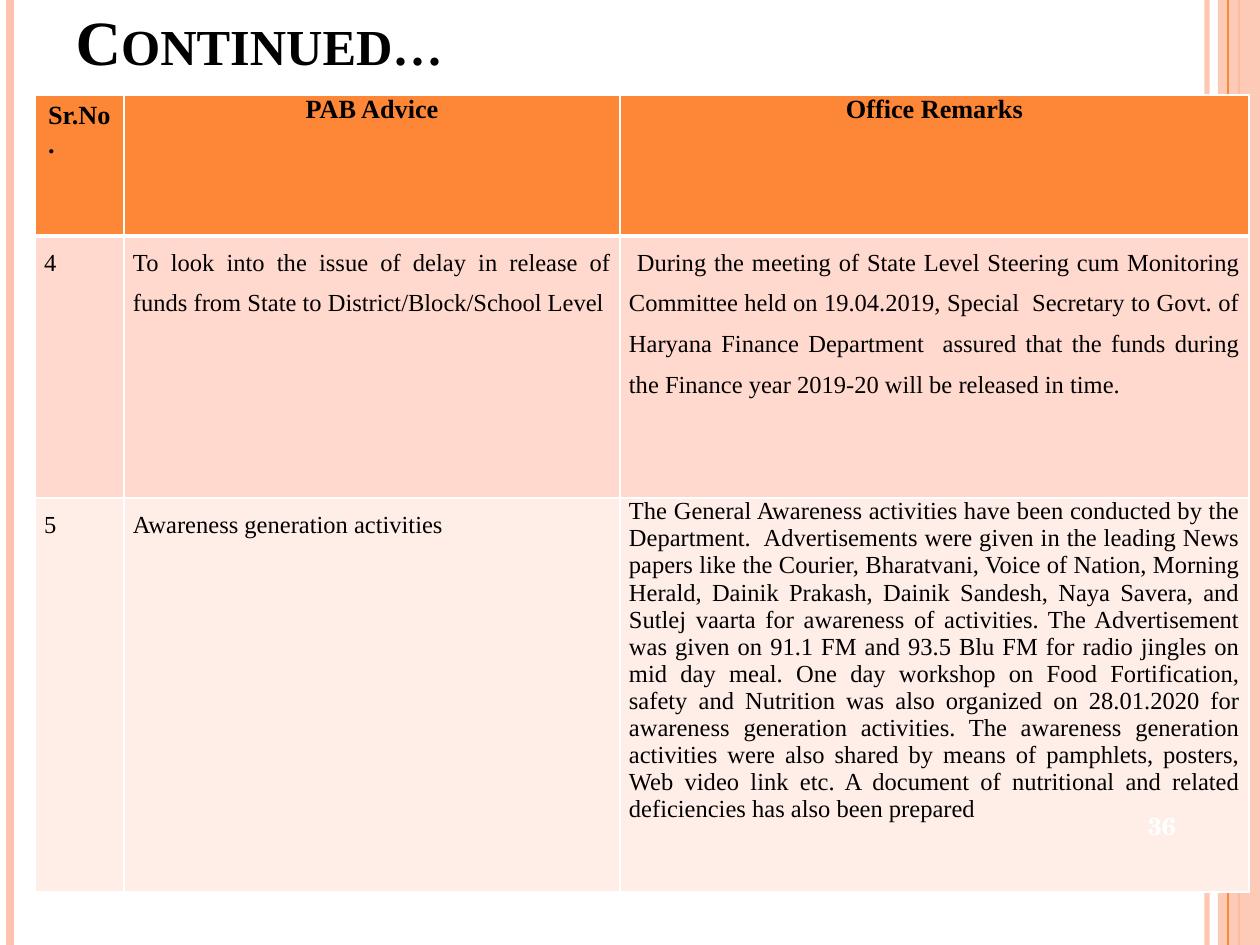
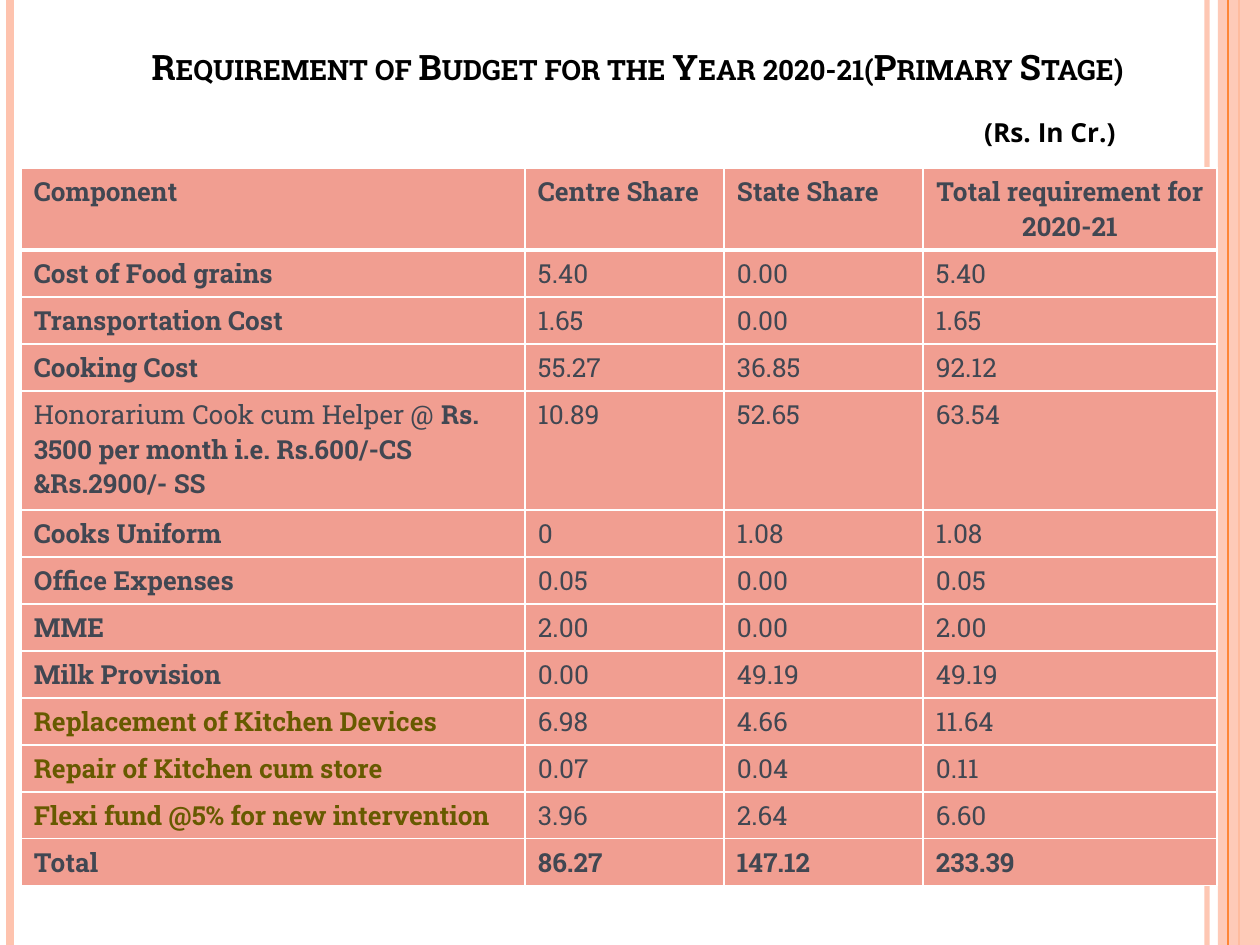
from lxml import etree
from pptx import Presentation
from pptx.dml.color import RGBColor
from pptx.enum.shapes import MSO_CONNECTOR, MSO_SHAPE
from pptx.enum.text import MSO_ANCHOR, MSO_AUTO_SIZE, PP_ALIGN
from pptx.oxml.ns import qn
from pptx.util import Pt

STRAIGHT = MSO_CONNECTOR.STRAIGHT
RECT = MSO_SHAPE.RECTANGLE
LEFT, CENTER, RIGHT, JUSTIFY = PP_ALIGN.LEFT, PP_ALIGN.CENTER, PP_ALIGN.RIGHT, PP_ALIGN.JUSTIFY
MIDDLE, BOTTOM = MSO_ANCHOR.MIDDLE, MSO_ANCHOR.BOTTOM
NO_FIT = MSO_AUTO_SIZE.NONE

WHITE = RGBColor(0xFF, 0xFF, 0xFF)
BLACK = RGBColor(0x00, 0x00, 0x00)
ORANGE = RGBColor(0xFE, 0x86, 0x37)
PEACH = RGBColor(0xFE, 0xC3, 0xAE)
BAND_DARK = RGBColor(0xFF, 0xD9, 0xCE)
BAND_LIGHT = RGBColor(0xFF, 0xED, 0xE8)
SALMON = RGBColor(0xF1, 0x9E, 0x91)
SLATE = RGBColor(0x41, 0x47, 0x52)
OLIVE = RGBColor(0x67, 0x5A, 0x00)

SERIF, SLAB = "Times New Roman", "Roboto Slab"
PAGE_FONT, UNIT_FONT = "TeX Gyre Schola", "Open Sans"

PX_PER_INCH = 126
SLIDE_W, SLIDE_H = 1260, 945
INSET_X, INSET_Y, NARROW_INSET = 13, 6, 9

RAILS_BELOW = [(1207, 3, PEACH, 93), (10, 4.5, PEACH, 100), (1239, 1.5, ORANGE, 100)]
SIDE_BAND = (1218, 0, 42, SLIDE_H)
RAILS_ABOVE = [(1228, 0.75, ORANGE, 100)]

ADVICE_TITLE = "Continued…"
ADVICE_PAGE = "36"
ADVICE_HEAD = ["Sr.No.", "PAB Advice", "Office Remarks"]
ADVICE_ROWS = [
    ("4",
     "To look into the issue of delay in release of funds from State to "
     "District/Block/School Level",
     " During the meeting of State Level Steering cum Monitoring Committee held on "
     "19.04.2019, Special  Secretary to Govt. of Haryana Finance Department  assured "
     "that the funds during the Finance year 2019-20 will be released in time."),
    ("5",
     "Awareness generation activities",
     "The General Awareness activities have been conducted by the Department.  "
     "Advertisements were given in the leading News papers like the Courier, "
     "Bharatvani, Voice of Nation, Morning Herald, Dainik Prakash, Dainik Sandesh, "
     "Naya Savera, and Sutlej vaarta for awareness of activities. The Advertisement "
     "was given on 91.1 FM and 93.5 Blu FM for radio jingles on mid day meal. One day "
     "workshop on Food Fortification, safety and Nutrition was also organized on "
     "28.01.2020 for awareness generation activities. The awareness generation "
     "activities were also shared by means of pamphlets, posters, Web video link etc. "
     "A document of nutritional and related deficiencies has also been prepared"),
]
ADVICE_COLS = [89, 496, 629]
ADVICE_HEIGHTS = [141, 262, 394]

BUDGET_TITLE = "Requirement of Budget for the Year 2020-21(Primary Stage)"
BUDGET_UNIT = "(Rs. In Cr.)"
BUDGET_HEAD = ["Component", "Centre Share", "State Share", "Total requirement for 2020-21"]
HONORARIUM = "Honorarium Cook cum Helper @ "
HONORARIUM_RATE = "Rs. 3500 per month i.e. Rs.600/-CS &Rs.2900/- SS"
BUDGET_ROWS = [
    ("Cost of Food grains", "5.40", "0.00", "5.40"),
    ("Transportation Cost", "1.65", "0.00", "1.65"),
    ("Cooking Cost", "55.27", "36.85", "92.12"),
    (HONORARIUM, "10.89", "52.65", "63.54"),
    ("Cooks Uniform", "0", "1.08", "1.08"),
    ("Office Expenses", "0.05", "0.00", "0.05"),
    ("MME", "2.00", "0.00", "2.00"),
    ("Milk Provision", "0.00", "49.19", "49.19"),
    ("Replacement of Kitchen Devices", "6.98", "4.66", "11.64"),
    ("Repair of Kitchen cum store", "0.07", "0.04", "0.11"),
    ("Flexi fund @5% for new intervention", "3.96", "2.64", "6.60"),
    ("Total", "86.27", "147.12", "233.39"),
]
NEW_COMPONENTS = {row[0] for row in BUDGET_ROWS[8:11]}
BUDGET_COLS = [504, 199, 199, 294]
HEAD_H, ROW_H, HONORARIUM_H = 82, 47, 119


def px(n):
    return round(n * 914400 / PX_PER_INCH)


def box(*lengths):
    return [px(n) for n in lengths]


def add_run(p, text, font, size, color, bold=True):
    r = p.add_run()
    r.text = text
    r.font.name = font
    r.font.size = Pt(size)
    r.font.bold = bold
    r.font.color.rgb = color
    return r


def set_alpha(fill_parent, percent):
    color = fill_parent.find(".//" + qn("a:srgbClr"))
    etree.SubElement(color, qn("a:alpha")).set("val", str(percent * 1000))


def add_rails(s, rails):
    for x, width, color, opacity in rails:
        line = s.shapes.add_connector(STRAIGHT, *box(x, 0, x, SLIDE_H))
        line.line.color.rgb = color
        line.line.width = Pt(width)
        sp_pr = line._element.spPr
        if opacity < 100:
            set_alpha(sp_pr, opacity)
        etree.SubElement(sp_pr, qn("a:effectLst"))


def add_slide(prs, title, place, font, size, align):
    s = prs.slides.add_slide(prs.slide_layouts[5])
    add_rails(s, RAILS_BELOW)
    band = s.shapes.add_shape(RECT, *box(*SIDE_BAND))
    band.shadow.inherit = False
    band.fill.solid()
    band.fill.fore_color.rgb = PEACH
    set_alpha(band._element.spPr, 87)
    band.line.fill.background()
    add_rails(s, RAILS_ABOVE)

    sp = s.shapes.title
    sp.left, sp.top, sp.width, sp.height = box(*place)
    tf = sp.text_frame
    tf.auto_size = NO_FIT
    tf.word_wrap = True
    tf.vertical_anchor = BOTTOM
    p = tf.paragraphs[0]
    p.alignment = align
    r = add_run(p, title, font, size, BLACK)
    r.font._element.set("cap", "small")
    return s


def add_label(s, text, place, font, size, color, align):
    tf = s.shapes.add_textbox(*box(*place)).text_frame
    tf.word_wrap = True
    tf.vertical_anchor = MIDDLE
    p = tf.paragraphs[0]
    p.alignment = align
    add_run(p, text, font, size, color)


def set_borders(cell, top, bottom):
    tc_pr = cell._tc.get_or_add_tcPr()
    sides = [("a:lnL", 1), ("a:lnR", 1), ("a:lnT", top), ("a:lnB", bottom)]
    for i, (side, width) in enumerate(sides):
        ln = etree.Element(qn(side), w=str(Pt(width)))
        fill = etree.SubElement(ln, qn("a:solidFill"))
        etree.SubElement(fill, qn("a:srgbClr")).set("val", str(WHITE))
        tc_pr.insert(i, ln)


def add_grid(s, left, top, cols, heights):
    frame = s.shapes.add_table(len(heights), len(cols),
                               *box(left, top, sum(cols), sum(heights)))
    table = frame.table
    table.first_row = table.horz_banding = False
    for column, width in zip(table.columns, cols):
        column.width = px(width)
    for row, height in zip(table.rows, heights):
        row.height = px(height)
    return table


def fill_cell(table, row, col, runs, fill, align=LEFT, spacing=None, narrow=False):
    cell = table.cell(row, col)
    cell.fill.solid()
    cell.fill.fore_color.rgb = fill
    set_borders(cell, 3 if row == 1 else 1, 3 if row == 0 else 1)
    cell.margin_left = cell.margin_right = px(NARROW_INSET if narrow else INSET_X)
    cell.margin_top = cell.margin_bottom = px(0 if narrow else INSET_Y)
    p = cell.text_frame.paragraphs[0]
    p.alignment = align
    if spacing:
        p.line_spacing = spacing
    for run in runs:
        add_run(p, *run)


def build_advice(prs):
    s = add_slide(prs, ADVICE_TITLE, (63, 45, 1134, 39), SERIF, 36, LEFT)
    table = add_grid(s, 35, 95, ADVICE_COLS, ADVICE_HEIGHTS)
    for col, text in enumerate(ADVICE_HEAD):
        fill_cell(table, 0, col, [(text, SERIF, 15, BLACK)], ORANGE,
                  CENTER if col else LEFT, narrow=col > 0)
    for row, texts in enumerate(ADVICE_ROWS, 1):
        for col, text in enumerate(texts):
            fill_cell(table, row, col, [(text, SERIF, 14, BLACK, False)],
                      BAND_DARK if row % 2 else BAND_LIGHT, JUSTIFY,
                      None if (row, col) == (2, 2) else 1.5, narrow=True)
    add_label(s, ADVICE_PAGE, (1120, 790, 84, 72), PAGE_FONT, 14, WHITE, CENTER)


def build_budget(prs):
    s = add_slide(prs, BUDGET_TITLE, (39, 0, 1197, 94), SLAB, 20, CENTER)
    heights = [HEAD_H] + [HONORARIUM_H if row[0] == HONORARIUM else ROW_H
                          for row in BUDGET_ROWS]
    table = add_grid(s, 21, 168, BUDGET_COLS, heights)
    for col, text in enumerate(BUDGET_HEAD):
        fill_cell(table, 0, col, [(text, SLAB, 15, SLATE)], SALMON,
                  CENTER if col == 3 else LEFT)
    for row, texts in enumerate(BUDGET_ROWS, 1):
        name = texts[0]
        for col, text in enumerate(texts):
            bold = name == "Total" or (col == 0 and name != HONORARIUM)
            color = OLIVE if text in NEW_COMPONENTS else SLATE
            runs = [(text, SLAB, 15, color, bold)]
            if text == HONORARIUM:
                runs.append((HONORARIUM_RATE, SLAB, 15, SLATE))
            fill_cell(table, row, col, runs, SALMON)
    add_label(s, BUDGET_UNIT, (861, 107, 267, 50), UNIT_FONT, 15, BLACK, RIGHT)


def main():
    prs = Presentation()
    prs.slide_width, prs.slide_height = box(SLIDE_W, SLIDE_H)
    build_advice(prs)
    build_budget(prs)
    prs.save("out.pptx")


if __name__ == "__main__":
    main()
